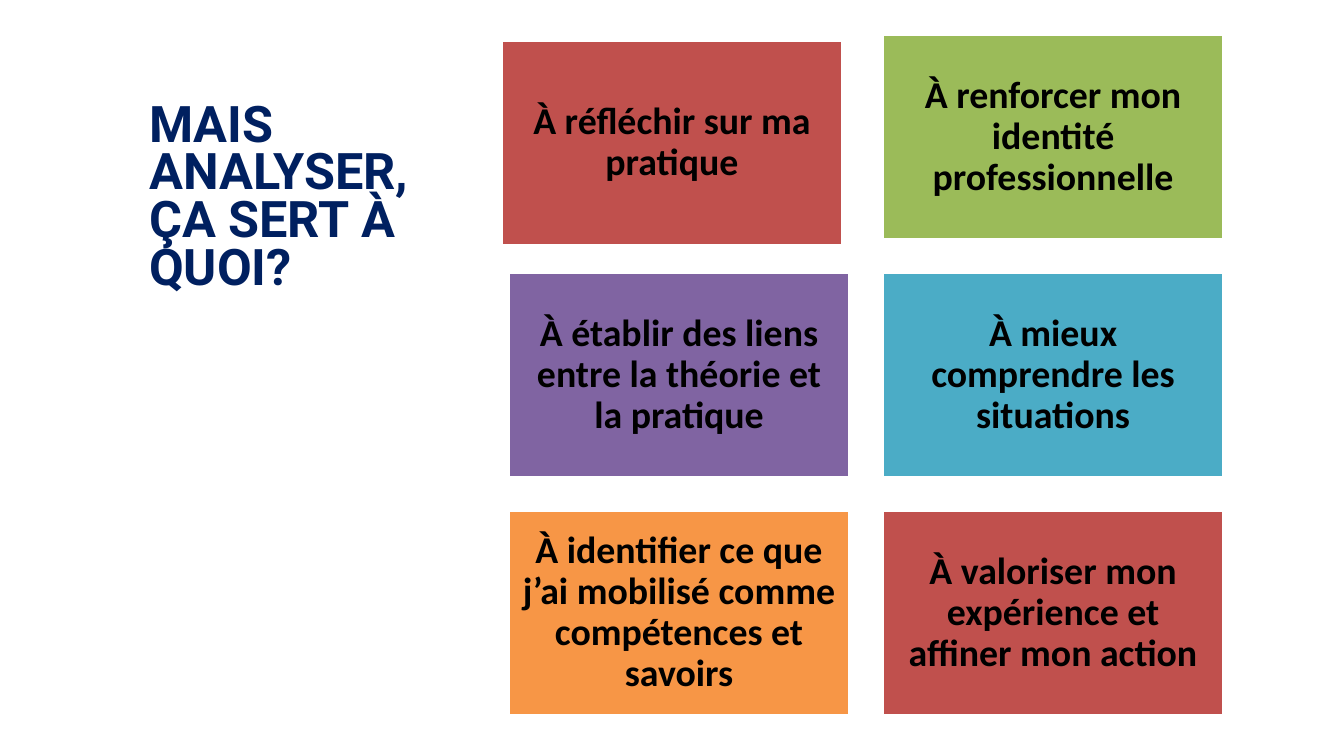
from pptx import Presentation
from pptx.dml.color import RGBColor
from pptx.enum.shapes import MSO_SHAPE as Shape
from pptx.enum.text import MSO_ANCHOR as Anchor, MSO_AUTO_SIZE as AutoSize, PP_ALIGN as Align
from pptx.util import Inches, Pt

COLORS = {
    "navy": "002060", "black": "000000", "white": "FFFFFF", "red": "C0504D",
    "green": "9BBB59", "purple": "8064A2", "blue": "4BACC6", "orange": "F79646",
}
TITLE = "MAIS ANALYSER, ÇA SERT À QUOI?"
REASONS = [
    ("À réfléchir sur ma pratique", "red"),
    ("À renforcer mon identité professionnelle", "green"),
    ("À établir des liens entre la théorie et la pratique", "purple"),
    ("À mieux comprendre les situations", "blue"),
    ("À identifier ce que j’ai mobilisé comme compétences et savoirs", "orange"),
    ("À valoriser mon expérience et affiner mon action", "red"),
]
COLUMNS = 2
GRID_LEFT, GRID_TOP = 5.05, 0.35
COLUMN_STEP, ROW_STEP = 3.71, 2.36
CARD_WIDTH, CARD_HEIGHT = 3.37, 2.02
FIRST_CARD_SHIFT = (-0.07, 0.06)


def color(name):
    """Return the named colour of the palette."""
    return RGBColor.from_string(COLORS[name])


def place(shape, left, top, width, height):
    """Set the position and size of a shape in inches."""
    shape.left, shape.top = Inches(left), Inches(top)
    shape.width, shape.height = Inches(width), Inches(height)


def format_text(paragraph, font_name, size, color_name, alignment, spacing):
    """Apply bold type, alignment and line spacing to a paragraph."""
    paragraph.alignment = alignment
    paragraph.line_spacing = spacing
    paragraph.space_before = Pt(0)
    for run in paragraph.runs:
        run.font.name = font_name
        run.font.size = Pt(size)
        run.font.bold = True
        run.font.color.rgb = color(color_name)


def set_title(slide):
    """Fill and format the title placeholder."""
    title = slide.shapes.title
    place(title, 1.38, 0.99, 2.92, 5.38)
    text_frame = title.text_frame
    text_frame.text = TITLE
    text_frame.word_wrap = True
    text_frame.auto_size = AutoSize.NONE
    text_frame.vertical_anchor = Anchor.TOP
    format_text(text_frame.paragraphs[0], "Roboto", 36, "navy", Align.LEFT, Pt(34))


def add_card(slide, index, text, fill_name):
    """Add one reason as a coloured card in the grid."""
    row, column = divmod(index, COLUMNS)
    shift_x, shift_y = FIRST_CARD_SHIFT if index == 0 else (0, 0)
    left = GRID_LEFT + column * COLUMN_STEP + shift_x
    top = GRID_TOP + row * ROW_STEP + shift_y
    card = slide.shapes.add_shape(
        Shape.RECTANGLE, Inches(left), Inches(top), Inches(CARD_WIDTH), Inches(CARD_HEIGHT))
    card.shadow.inherit = False
    card.fill.solid()
    card.fill.fore_color.rgb = color(fill_name)
    card.line.color.rgb = color("white")
    card.line.width = Pt(1)
    text_frame = card.text_frame
    text_frame.text = text
    text_frame.word_wrap = True
    text_frame.vertical_anchor = Anchor.MIDDLE
    text_frame.margin_left = text_frame.margin_right = Inches(0.11)
    text_frame.margin_top = text_frame.margin_bottom = Inches(0.11)
    format_text(text_frame.paragraphs[0], "Calibri", 27, "black", Align.CENTER, 0.9)


def main():
    """Build the slide and save it."""
    presentation = Presentation()
    presentation.slide_width, presentation.slide_height = Inches(13.33), Inches(7.5)
    slide = presentation.slides.add_slide(presentation.slide_layouts.get_by_name("Title Only"))
    set_title(slide)
    for index, (text, fill_name) in enumerate(REASONS):
        add_card(slide, index, text, fill_name)
    presentation.save("out.pptx")


if __name__ == "__main__":
    main()
